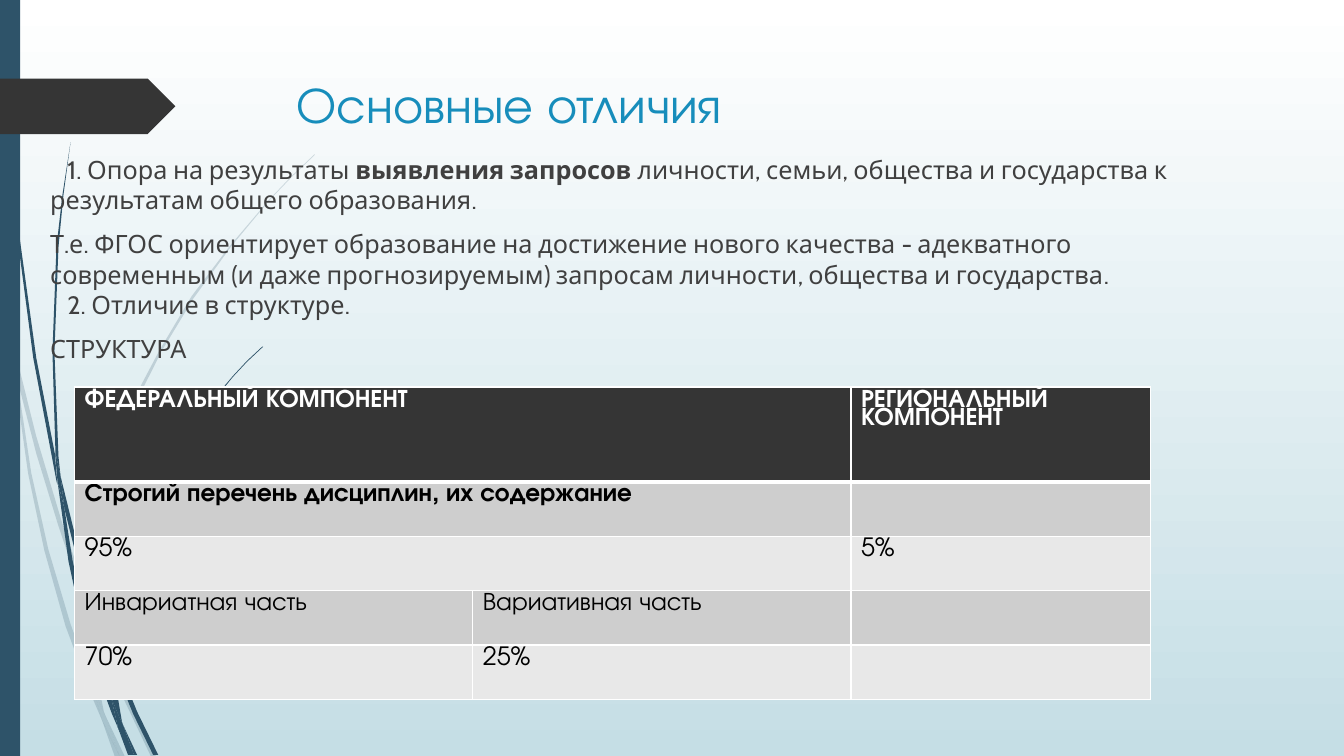
from lxml import etree
from pptx import Presentation
from pptx.dml.color import RGBColor
from pptx.enum.shapes import MSO_SHAPE
from pptx.oxml.ns import qn
from pptx.util import Inches, Pt

RECT, ARROW = MSO_SHAPE.RECTANGLE, MSO_SHAPE.PENTAGON
WIDE, HIGH = 13.33, 7.5
HEAD, BODY = "TeX Gyre Adventor", "Cabin"
HUES = {"blue": "2E5369", "dark": "353535", "title": "178DBB", "text": "404040",
        "white": "FFFFFF", "black": "000000", "mist": "C5DEE5",
        "odd": "CECECE", "even": "E8E8E8"}

PALE = [
    [(11, 350), (9, 322), (0, 282), (0, 299), (10, 344)],
    [(58, 522), (84, 599), (85, 586), (62, 520), (36, 433), (14, 345), (17, 376), (36, 450)],
    [(92, 607), (88, 596), (88, 610), (123, 694), (150, 751), (155, 751), (127, 692)],
    [(119, 751), (124, 751), (105, 711)],
    [(93, 683), (70, 619), (48, 545), (31, 469), (17, 376), (11, 350), (28, 470),
     (44, 546), (65, 621), (92, 693), (101, 714), (99, 707)],
    [(84, 599), (87, 646), (93, 683), (96, 692), (105, 711), (103, 706), (91, 646),
     (88, 610), (88, 608)],
    [(88, 584), (95, 522), (110, 462), (132, 405), (160, 349), (192, 296), (229, 245),
     (268, 198), (290, 175), (312, 154), (312, 153), (289, 175), (268, 197), (228, 244),
     (190, 294), (158, 348), (129, 403), (107, 461), (92, 521), (85, 584), (85, 586), (88, 596)],
    [(101, 714), (114, 751), (119, 751)],
    [(88, 608), (88, 610), (88, 596), (85, 586), (84, 599)],
    [(96, 692), (93, 683), (99, 707), (101, 714), (119, 751), (105, 711)],
]
DEEP = [
    [(7, 110), (17, 233), (33, 355), (56, 477), (57, 481), (55, 457), (55, 453), (36, 355),
     (19, 232), (8, 109), (5, 48), (4, 0), (3, 0), (4, 48)],
    [(88, 592), (106, 645), (106, 633), (106, 631), (93, 590), (75, 533), (60, 472),
     (64, 505), (75, 549)],
    [(113, 649), (110, 641), (111, 656), (132, 708), (152, 749), (157, 749), (136, 706)],
    [(110, 691), (98, 657), (83, 607), (72, 556), (64, 505), (57, 477), (68, 557),
     (79, 608), (93, 659), (111, 708), (117, 722), (116, 717)],
    [(60, 472), (58, 453), (54, 349), (58, 245), (63, 193), (70, 141), (62, 193),
     (56, 245), (52, 349), (55, 449)],
    [(133, 749), (136, 749), (122, 719)],
    [(57, 477), (64, 505), (60, 472), (55, 449), (55, 453)],
    [(111, 633), (114, 592), (125, 552), (140, 513), (158, 476), (180, 440), (205, 406),
     (231, 374), (245, 359), (261, 344), (260, 344), (245, 358), (231, 373), (204, 405),
     (178, 439), (156, 474), (137, 512), (122, 551), (111, 591), (106, 631), (110, 641)],
    [(117, 722), (127, 749), (131, 749)],
    [(106, 645), (110, 691), (116, 706), (122, 719), (121, 716), (111, 656), (109, 651)],
    [(106, 645), (109, 651), (111, 656), (110, 641), (106, 631)],
    [(116, 706), (110, 691), (116, 717), (117, 722), (130, 749), (133, 749), (122, 719)],
]


def tint(name):
    """Return the named colour."""
    return RGBColor.from_string(HUES[name])


def paint(shape, hue):
    """Give a shape a flat fill with no line or shadow."""
    shape.shadow.inherit = False
    shape.fill.solid()
    shape.fill.fore_color.rgb = tint(hue)
    shape.line.fill.background()


def write(para, text, font=BODY, size=18, hue="text", bold=False):
    """Add a formatted run to a paragraph."""
    run = para.add_run()
    run.text = text
    run.font.name, run.font.size, run.font.bold = font, Pt(size), bold
    run.font.color.rgb = tint(hue)


def frame(slide, box):
    """Add a wrapping text box and return its text frame."""
    area = slide.shapes.add_textbox(*map(Inches, box)).text_frame
    area.word_wrap = True
    return area


def sky(slide):
    """Fill the background from white down to mist."""
    fill = slide.background.fill
    fill.gradient()
    fill.gradient_angle = 270
    for stop, hue in zip(fill.gradient_stops, ("white", "mist")):
        stop.color.rgb = tint(hue)


def wisps(slide, blades, alpha=100):
    """Draw blades of grass given in hundredths of an inch."""
    for first, *rest in blades:
        pen = slide.shapes.build_freeform(*first, scale=Inches(0.01))
        pen.add_line_segments(rest, close=True)
        blade = pen.convert_to_shape()
        paint(blade, "blue")
        if alpha < 100:
            color = blade.fill._xPr.find(qn("a:solidFill"))[0]
            etree.SubElement(color, qn("a:alpha")).set("val", str(alpha * 1000))


def block(slide, kind, box, hue):
    """Add a plain preset shape."""
    paint(slide.shapes.add_shape(kind, *map(Inches, box)), hue)


def title(slide, box):
    """Place the slide title."""
    para = frame(slide, box).paragraphs[0]
    write(para, "Основные отличия", font=HEAD, size=36, hue="title")


def points(slide, box):
    """Place the body paragraphs, each with its gap and indent."""
    area = frame(slide, box)
    rows = [
        (0, 0.17, ["1. Опора на результаты ", "выявления запросов ",
                   "личности, семьи, общества и государства к результатам общего образования."]),
        (10, 0, ["Т.е. ФГОС ориентирует образование на достижение нового качества - адекватного "
                 "современным (и даже прогнозируемым) запросам личности, общества и государства."]),
        (0, 0.17, ["2. Отличие в структуре."]),
        (10, 0, ["СТРУКТУРА"]),
    ]
    for i, (gap, dent, parts) in enumerate(rows):
        para = area.add_paragraph() if i else area.paragraphs[0]
        para.space_before = Pt(gap)
        para._p.get_or_add_pPr().set("indent", str(Inches(dent)))
        for j, part in enumerate(parts):
            write(para, part, bold=j == 1)


def edge(cell, base):
    """Draw white borders round a cell, with its own base width."""
    props = cell._tc.get_or_add_tcPr()
    for i, side in enumerate(("lnL", "lnR", "lnT", "lnB")):
        line = etree.Element(qn("a:" + side), w=str(Pt(base if side == "lnB" else 1)))
        fill = etree.SubElement(line, qn("a:solidFill"))
        etree.SubElement(fill, qn("a:srgbClr"), val=HUES["white"])
        props.insert(i, line)


def shares(slide, box):
    """Place the table of components and their shares."""
    rows = [
        ["ФЕДЕРАЛЬНЫЙ КОМПОНЕНТ", "", "РЕГИОНАЛЬНЫЙ КОМПОНЕНТ"],
        ["Строгий перечень дисциплин, их содержание", "", ""],
        ["95%", "", "5%"],
        ["Инвариатная часть", "Вариативная часть", ""],
        ["70%", "25%", ""],
    ]
    grid = slide.shapes.add_table(len(rows), 3, *map(Inches, box)).table
    for col, wide in zip(grid.columns, (3.95, 3.75, 2.97)):
        col.width = Inches(wide)
    for i, row in enumerate(rows):
        grid.rows[i].height = Inches(0.54 if i else 0.94)
        for j, text in enumerate(row):
            cell = grid.cell(i, j)
            cell.fill.solid()
            cell.fill.fore_color.rgb = tint(("odd" if i % 2 else "even") if i else "dark")
            edge(cell, 1 if i else 3)
            para = cell.text_frame.paragraphs[0]
            para.line_spacing = 0.8
            if text:
                write(para, text, font=HEAD, hue="black" if i else "white", bold=i < 2)
        if i < 3:
            grid.cell(i, 0).merge(grid.cell(i, 1))


def main():
    """Build and save the slide."""
    deck = Presentation()
    deck.slide_width, deck.slide_height = Inches(WIDE), Inches(HIGH)
    slide = deck.slides.add_slide(deck.slide_layouts[6])
    sky(slide)
    wisps(slide, PALE, alpha=20)
    wisps(slide, DEEP)
    block(slide, RECT, (0, 0, 0.2, HIGH), "blue")
    block(slide, ARROW, (0, 0.78, 1.74, 0.55), "dark")
    title(slide, (2.84, 0.68, 9.75, 1.4))
    points(slide, (0.4, 1.48, 11.5, 4.76))
    shares(slide, (0.74, 3.84, 10.67, 3.12))
    deck.save("out.pptx")


if __name__ == "__main__":
    main()
